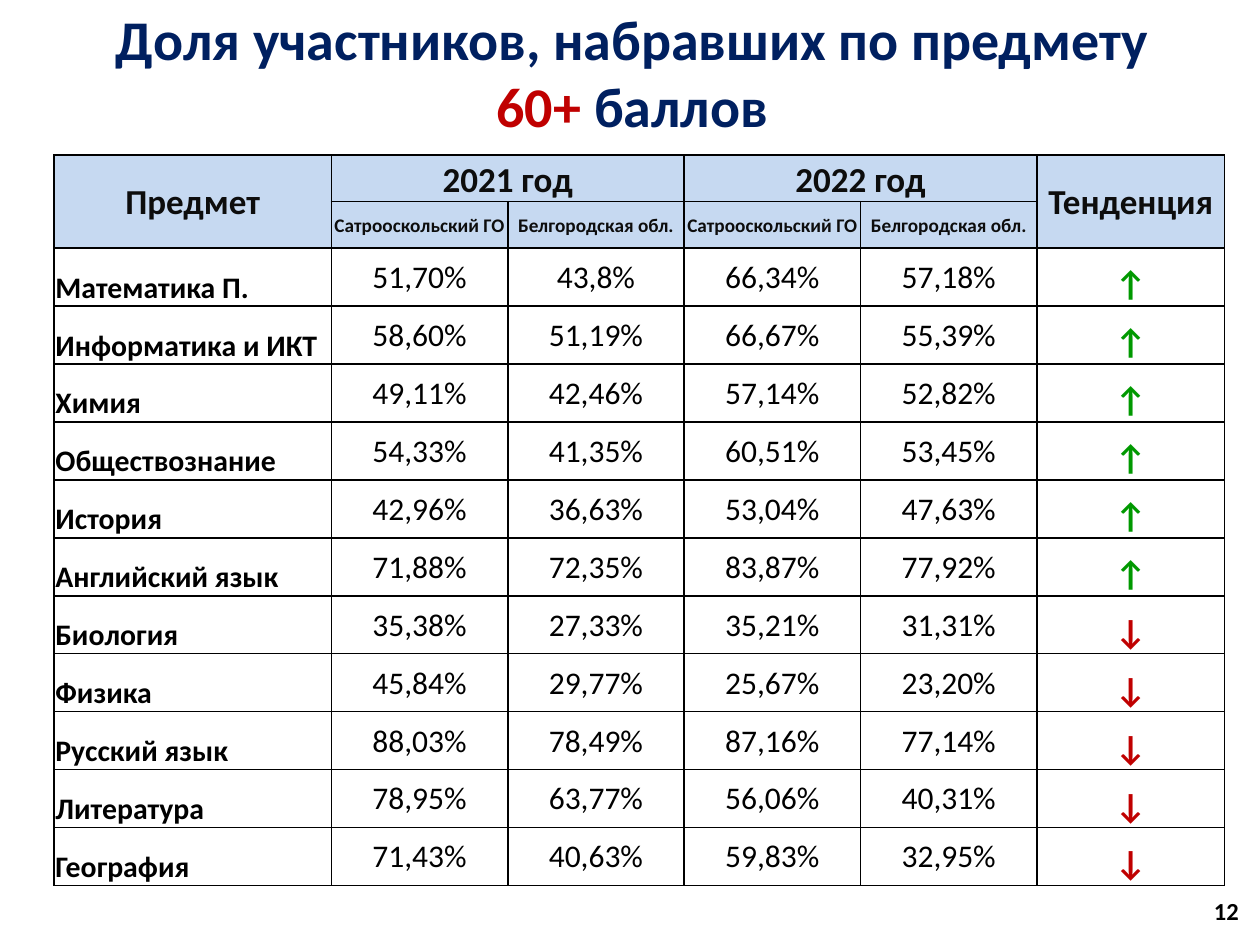
from lxml.etree import SubElement
from pptx import Presentation
from pptx.dml.color import RGBColor
from pptx.enum.text import MSO_ANCHOR as ANCHOR, PP_ALIGN as ALIGN
from pptx.oxml.ns import qn
from pptx.util import Inches, Pt

FONT = "Calibri"
BLACK, HEADER_TEXT, HEADER_FILL = "000000", "0D0D0D", "C6D9F1"
NAVY, RED, GREEN = "002060", "C00000", "009900"

COLUMN_WIDTHS = [2.2, 1.4, 1.4, 1.4, 1.4, 1.49]
HEADER_HEIGHT, ROW_HEIGHT = 0.37, 0.46
YEARS = ["2021 год", "2022 год"]
REGIONS = ["Сатрооскольский ГО", "Белгородская обл."]
RESULTS = [
    ("Математика П.", "51,70%", "43,8%", "66,34%", "57,18%", "↑"),
    ("Информатика и ИКТ", "58,60%", "51,19%", "66,67%", "55,39%", "↑"),
    ("Химия", "49,11%", "42,46%", "57,14%", "52,82%", "↑"),
    ("Обществознание", "54,33%", "41,35%", "60,51%", "53,45%", "↑"),
    ("История", "42,96%", "36,63%", "53,04%", "47,63%", "↑"),
    ("Английский язык", "71,88%", "72,35%", "83,87%", "77,92%", "↑"),
    ("Биология", "35,38%", "27,33%", "35,21%", "31,31%", "↓"),
    ("Физика", "45,84%", "29,77%", "25,67%", "23,20%", "↓"),
    ("Русский язык", "88,03%", "78,49%", "87,16%", "77,14%", "↓"),
    ("Литература", "78,95%", "63,77%", "56,06%", "40,31%", "↓"),
    ("География", "71,43%", "40,63%", "59,83%", "32,95%", "↓"),
]


def rgb(color):
    return RGBColor.from_string(color)


def format_run(r, size, color, bold=True):
    r.font.name = FONT
    r.font.size = Pt(size)
    r.font.bold = bold
    r.font.color.rgb = rgb(color)


def add_text(slide, left, top, width, height, runs, size, align):
    """Add a one-paragraph text box; runs are (text, color) pairs."""
    box = slide.shapes.add_textbox(Inches(left), Inches(top), Inches(width), Inches(height))
    tf = box.text_frame
    tf.word_wrap = True
    tf.vertical_anchor = ANCHOR.MIDDLE
    p = tf.paragraphs[0]
    p.alignment = align
    for text, color in runs:
        r = p.add_run()
        r.text = text
        format_run(r, size, color)


def style_cell(cell, fill=None):
    """Set margins, 1 pt black borders and the fill."""
    cell.margin_left = cell.margin_right = cell.margin_top = Inches(0.01)
    cell.margin_bottom = 0
    tc_pr = cell._tc.get_or_add_tcPr()
    for side in ("a:lnL", "a:lnR", "a:lnT", "a:lnB"):
        ln = SubElement(tc_pr, qn(side), w=str(Pt(1)))
        SubElement(SubElement(ln, qn("a:solidFill")), qn("a:srgbClr"), val=BLACK)
    if fill:
        cell.fill.solid()
        cell.fill.fore_color.rgb = rgb(fill)
    else:
        cell.fill.background()


def write_cell(cell, text, size, color=BLACK, bold=True, align=ALIGN.CENTER, anchor=ANCHOR.MIDDLE):
    cell.text = text
    cell.vertical_anchor = anchor
    p = cell.text_frame.paragraphs[0]
    p.alignment = align
    format_run(p.runs[0], size, color, bold)


def fill_header(table):
    for col, text in ((0, "Предмет"), (5, "Тенденция")):
        table.cell(0, col).merge(table.cell(1, col))
        write_cell(table.cell(0, col), text, 20, HEADER_TEXT)
    for i, year in enumerate(YEARS):
        col = 1 + 2 * i
        table.cell(0, col).merge(table.cell(0, col + 1))
        write_cell(table.cell(0, col), year, 20, HEADER_TEXT, anchor=ANCHOR.BOTTOM)
        for j, region in enumerate(REGIONS):
            write_cell(table.cell(1, col + j), region, 11, HEADER_TEXT)


def fill_results(table):
    for row, (subject, *shares, trend) in enumerate(RESULTS, start=2):
        write_cell(table.cell(row, 0), subject, 17, align=ALIGN.LEFT, anchor=ANCHOR.BOTTOM)
        for col, share in enumerate(shares, start=1):
            write_cell(table.cell(row, col), share, 18, bold=False)
        write_cell(table.cell(row, 5), trend, 20, GREEN if trend == "↑" else RED,
                   anchor=ANCHOR.BOTTOM)


def add_results_table(slide):
    heights = [HEADER_HEIGHT] * 2 + [ROW_HEIGHT] * len(RESULTS)
    table = slide.shapes.add_table(len(heights), len(COLUMN_WIDTHS), Inches(0.43), Inches(1.23),
                                   Inches(sum(COLUMN_WIDTHS)), Inches(sum(heights))).table
    table.horz_banding = False
    for column, width in zip(table.columns, COLUMN_WIDTHS):
        column.width = Inches(width)
    for i, (row, height) in enumerate(zip(table.rows, heights)):
        row.height = Inches(height)
        for cell in row.cells:
            style_cell(cell, HEADER_FILL if i < 2 else None)
    fill_header(table)
    fill_results(table)


def main():
    prs = Presentation()
    prs.slide_width, prs.slide_height = Inches(10), Inches(7.5)
    slide = prs.slides.add_slide(prs.slide_layouts[6])
    add_results_table(slide)
    title = [("Доля участников, набравших по предмету ", NAVY), ("60+ ", RED), ("баллов", NAVY)]
    add_text(slide, 0.52, -0.06, 9, 1.25, title, 32, ALIGN.CENTER)
    add_text(slide, 7.6, 7.03, 2.33, 0.4, [("12", BLACK)], 14, ALIGN.RIGHT)
    prs.save("out.pptx")


if __name__ == "__main__":
    main()
